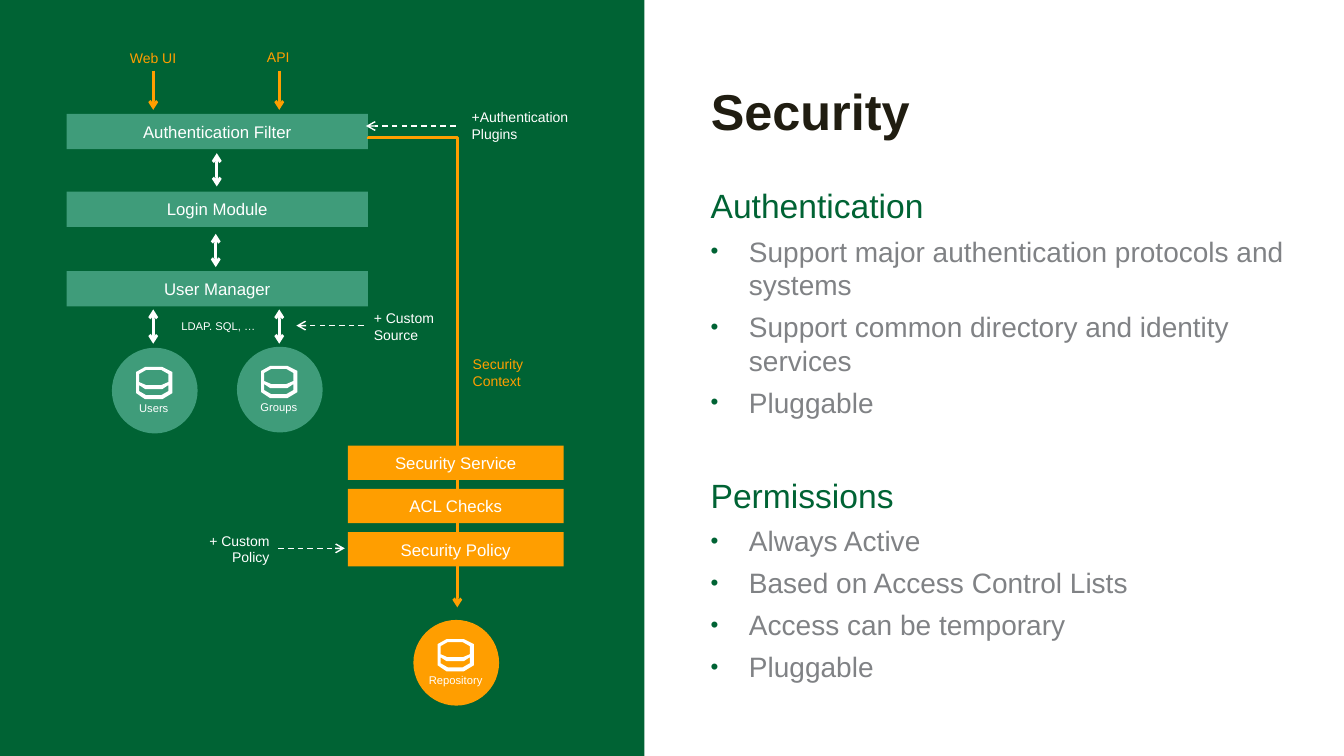
from lxml import etree
from pptx import Presentation
from pptx import util as u
from pptx.dml.color import RGBColor
from pptx.enum import dml, shapes, text
from pptx.oxml import ns

COLORS = {
    "panel": "006334",
    "green": "3F9C7A",
    "orange": "FF9E00",
    "white": "FFFFFF",
    "title": "201D11",
    "gray": "808285",
}
EMU_PER_PX = 9144
LEFT, CENTER, RIGHT = text.PP_ALIGN.LEFT, text.PP_ALIGN.CENTER, text.PP_ALIGN.RIGHT

DATABASE_OUTLINES = [
    [(9, 32), (26, 32), (36, 26), (36, 5), (26, 0), (9, 0), (0, 5), (0, 26)],
    [(3, 7), (10, 3), (25, 3), (32, 7), (32, 15), (25, 18), (10, 18), (3, 15)],
    [(3, 18), (9, 22), (26, 22), (32, 18), (32, 24), (25, 28), (10, 28), (3, 24)],
]


def px(*lengths):
    return [u.Emu(length * EMU_PER_PX) for length in lengths]


def rgb(color):
    return RGBColor.from_string(COLORS[color])


def add_xml(parent, tag, **attributes):
    return etree.SubElement(parent, ns.qn(tag), attributes)


class Slide:
    """Holds the style and the current page."""

    font = "Arial"

    def __init__(self, deck):
        self.page = deck.slides.add_slide(deck.slide_layouts[5])

    def add_span(self, para, words, size, color, bold=False):
        span = para.add_run()
        span.text = words
        span.font.name = self.font
        span.font.size = u.Pt(size)
        span.font.bold = bold
        span.font.color.rgb = rgb(color)

    def title(self, words, *place):
        box = self.page.shapes.title
        box.left, box.top, box.width, box.height = px(*place)
        frame = box.text_frame
        frame.auto_size = text.MSO_AUTO_SIZE.NONE
        frame.vertical_anchor = text.MSO_ANCHOR.TOP
        para = frame.paragraphs[0]
        para.alignment = LEFT
        self.add_span(para, words, 36, "title", bold=True)

    def shape(self, kind, color, *place):
        box = self.page.shapes.add_shape(kind, *px(*place))
        return self.paint(box, color)

    def paint(self, box, color):
        box.shadow.inherit = False
        box.fill.solid()
        box.fill.fore_color.rgb = rgb(color)
        box.line.fill.background()
        return box

    def block(self, words, color, *place):
        box = self.shape(shapes.MSO_SHAPE.RECTANGLE, color, *place)
        box.text_frame.vertical_anchor = text.MSO_ANCHOR.MIDDLE
        para = box.text_frame.paragraphs[0]
        para.alignment = CENTER
        self.add_span(para, words, 12, "white")

    def label(self, words, *place, size=10, color="white", align=LEFT):
        frame = self.page.shapes.add_textbox(*px(*place)).text_frame
        frame.word_wrap = align == RIGHT
        frame.auto_size = text.MSO_AUTO_SIZE.SHAPE_TO_FIT_TEXT
        for number, line in enumerate(words.split("\n")):
            para = frame.add_paragraph() if number else frame.paragraphs[0]
            para.alignment = align
            self.add_span(para, line, size, color)

    def store(self, words, color, left, top, label_width):
        """Draw a labelled circle with a database symbol."""
        self.shape(shapes.MSO_SHAPE.OVAL, color, left, top, 85, 85)
        x, y = left + 24, top + 19
        builder = None
        for outline in DATABASE_OUTLINES:
            points = [(x + dx, y + dy) for dx, dy in outline]
            if builder is None:
                builder = self.page.shapes.build_freeform(*points[0], scale=EMU_PER_PX)
            else:
                builder.move_to(*points[0])
            builder.add_line_segments(points[1:], close=True)
        self.paint(builder.convert_to_shape(), "white")
        label_left = left + (84 - label_width) // 2
        self.label(words, label_left, top + 48, label_width, 24, size=8, align=CENTER)

    def arrow(self, *ends, color="white", both=False, dashed=False,
              kind=shapes.MSO_CONNECTOR.STRAIGHT):
        link = self.page.shapes.add_connector(kind, *px(*ends))
        link.line.color.rgb = rgb(color)
        link.line.width = u.Pt(1 if dashed else 2)
        if dashed:
            link.line.dash_style = dml.MSO_LINE.DASH
        outline = link._element.spPr.find(ns.qn("a:ln"))
        if both:
            add_xml(outline, "a:headEnd", type="arrow")
        add_xml(outline, "a:tailEnd", type="arrow")
        add_xml(link._element.spPr, "a:effectLst")
        return link

    def context_path(self, *ends):
        """Draw the elbow arrow, turned so that it leaves sideways and runs down."""
        link = self.arrow(*ends, color="orange", kind=shapes.MSO_CONNECTOR.ELBOW)
        properties = link._element.spPr
        properties.find(ns.qn("a:xfrm")).set("rot", "16200000")
        guides = properties.find(ns.qn("a:prstGeom")).get_or_add_avLst()
        add_xml(guides, "a:gd", name="adj1", fmla="val -200")

    def topics(self, sections, *place):
        frame = self.page.shapes.add_textbox(*px(*place)).text_frame
        frame.word_wrap = True
        for number, (heading, points) in enumerate(sections):
            para = frame.add_paragraph() if number else frame.paragraphs[0]
            para.space_before = u.Pt(34 if number else 0)
            para.space_after = u.Pt(6)
            self.add_span(para, heading, 24, "panel")
            for point in points:
                para = frame.add_paragraph()
                para.space_after = u.Pt(6)
                self.add_span(para, point, 20, "gray")
                self.bullet(para)

    def bullet(self, para):
        indent = px(38)[0]
        properties = para._p.get_or_add_pPr()
        properties.set("marL", str(indent))
        properties.set("indent", str(-indent))
        add_xml(add_xml(properties, "a:buClr"), "a:srgbClr", val=COLORS["panel"])
        add_xml(properties, "a:buSzPct", val="80000")
        add_xml(properties, "a:buFont", typeface=self.font)
        add_xml(properties, "a:buChar", char="•")


def main():
    deck = Presentation()
    deck.slide_width, deck.slide_height = px(1333, 750)
    slide = Slide(deck)
    slide.shape(shapes.MSO_SHAPE.RECTANGLE, "panel", 0, 0, 639, 750)

    for words, top in [("Authentication Filter", 113), ("Login Module", 190),
                       ("User Manager", 269)]:
        slide.block(words, "green", 66, top, 299, 35)
    slide.store("Users", "green", 111, 345, 51)
    slide.store("Groups", "green", 235, 344, 59)

    for x in (152, 277):
        slide.arrow(x, 70, x, 109, color="orange")
        slide.arrow(x, 307, x, 341, both=True)
    for x, top in [(215, 152), (214, 232)]:
        slide.arrow(x, top, x, top + 33, both=True)

    slide.label("Web UI", 119, 44, 66, 27, color="orange")
    slide.label("API", 255, 43, 44, 27, color="orange")
    slide.label("LDAP. SQL, …", 170, 312, 96, 24, size=8)
    slide.label("+ Custom\nSource", 361, 302, 81, 44)
    slide.label("+Authentication\nPlugins", 458, 103, 120, 44)
    slide.label("Security\nContext", 459, 348, 75, 44, color="orange")
    slide.label("+ Custom\nPolicy", 193, 523, 84, 44, align=RIGHT)

    slide.context_path(642, 326, 177, 414)
    for ends in [(452, 125, 363, 125), (361, 323, 294, 323), (276, 544, 342, 544)]:
        slide.arrow(*ends, dashed=True)

    for row, words in enumerate(["Security Service", "ACL Checks", "Security Policy"]):
        slide.block(words, "orange", 345, 442 + 43 * row, 214, 34)
    slide.store("Repository", "orange", 410, 615, 74)

    slide.title("Security", 695, 74, 597, 68)
    slide.topics([
        ("Authentication", ["Support major authentication protocols and systems",
                            "Support common directory and identity services",
                            "Pluggable"]),
        ("Permissions", ["Always Active", "Based on Access Control Lists",
                         "Access can be temporary", "Pluggable"]),
    ], 695, 179, 597, 506)
    deck.save("out.pptx")


if __name__ == "__main__":
    main()
